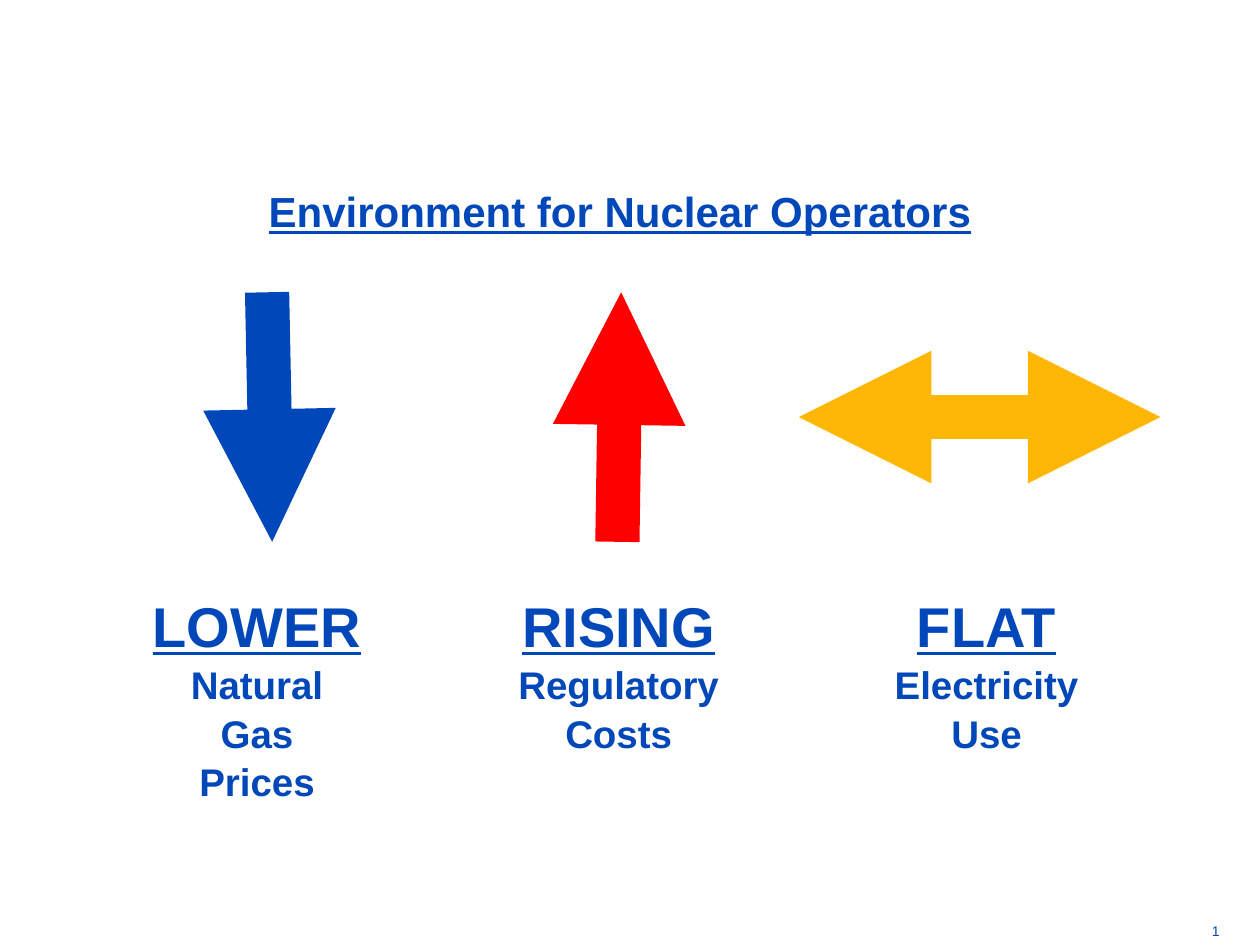
"""Build the slide on the environment for nuclear operators."""
from lxml import etree
from pptx import Presentation
from pptx import util as u
from pptx.dml.color import RGBColor
from pptx.enum import shapes, text
from pptx.oxml.ns import qn

THEME = {
    "font": "Arial",
    "blue": RGBColor.from_string("0048B9"),
    "red": RGBColor.from_string("FF0000"),
    "amber": RGBColor.from_string("FEB705"),
    "title": 24, "heading": 32, "body": 22, "number": 8, "arrow": 25.25,
}

presentation = Presentation()
presentation.slide_width, presentation.slide_height = u.Inches(10), u.Inches(7.5)
column = presentation.slide_width / 100
row = presentation.slide_height / 75
slide = presentation.slides.add_slide(presentation.slide_layouts[5])


def place(left, top, width, height):
    return [round(value) for value in (left * column, top * row, width * column, height * row)]


def write(paragraph, words, size, **extra):
    run = paragraph.add_run()
    run.text = words
    run.font.color.rgb = THEME["blue"]
    for name, value in {"name": THEME["font"], "size": u.Pt(THEME[size]), **extra}.items():
        setattr(run.font, name, value)


title = slide.shapes.title
title.left, title.top, title.width, title.height = place(4.2, 12.3, 90, 8.9)
title.text_frame.vertical_anchor = text.MSO_ANCHOR.MIDDLE
title_paragraph = title.text_frame.paragraphs[0]
title_paragraph.alignment = text.PP_ALIGN.CENTER
write(title_paragraph, "Environment for Nuclear Operators", "title", bold=True, underline=True)

arrows = [
    ("blue", (21.2, 23.2), (21.6, 43), ["tailEnd"]),
    ("red", (49, 43), (49.3, 23.2), ["tailEnd"]),
    ("amber", (63.4, 33.1), (92.1, 33.1), ["headEnd", "tailEnd"]),
]
for color, start, end, heads in arrows:
    arrow = slide.shapes.add_connector(
        shapes.MSO_CONNECTOR.STRAIGHT, *place(*start, *end))
    arrow.line.color.rgb = THEME[color]
    arrow.line.width = u.Pt(THEME["arrow"])
    for head in heads:
        etree.SubElement(arrow.line._get_or_add_ln(), qn(f"a:{head}"), type="triangle")
    etree.SubElement(arrow._element.spPr, qn("a:effectLst"))

trends = [
    (8.7, 17.5, "LOWER", ["Natural", "Gas", "Prices"]),
    (37.4, 13.8, "RISING", ["Regulatory", "Costs"]),
    (66.6, 13.8, "FLAT", ["Electricity", "Use"]),
]
for left, height, heading, lines in trends:
    frame = slide.shapes.add_textbox(*place(left, 46.2, 23.4, height)).text_frame
    frame.word_wrap = True
    frame.auto_size = text.MSO_AUTO_SIZE.SHAPE_TO_FIT_TEXT
    write(frame.paragraphs[0], heading, "heading", bold=True, underline=True)
    for line in lines:
        write(frame.add_paragraph(), line, "body", bold=True)
    for paragraph in frame.paragraphs:
        paragraph.alignment = text.PP_ALIGN.CENTER
        paragraph.line_spacing = 1.05

number = slide.shapes.add_textbox(*place(95.2, 72.7, 4.8, 2.3)).text_frame
number.word_wrap = True
write(number.paragraphs[0], "1", "number")

presentation.save("out.pptx")
